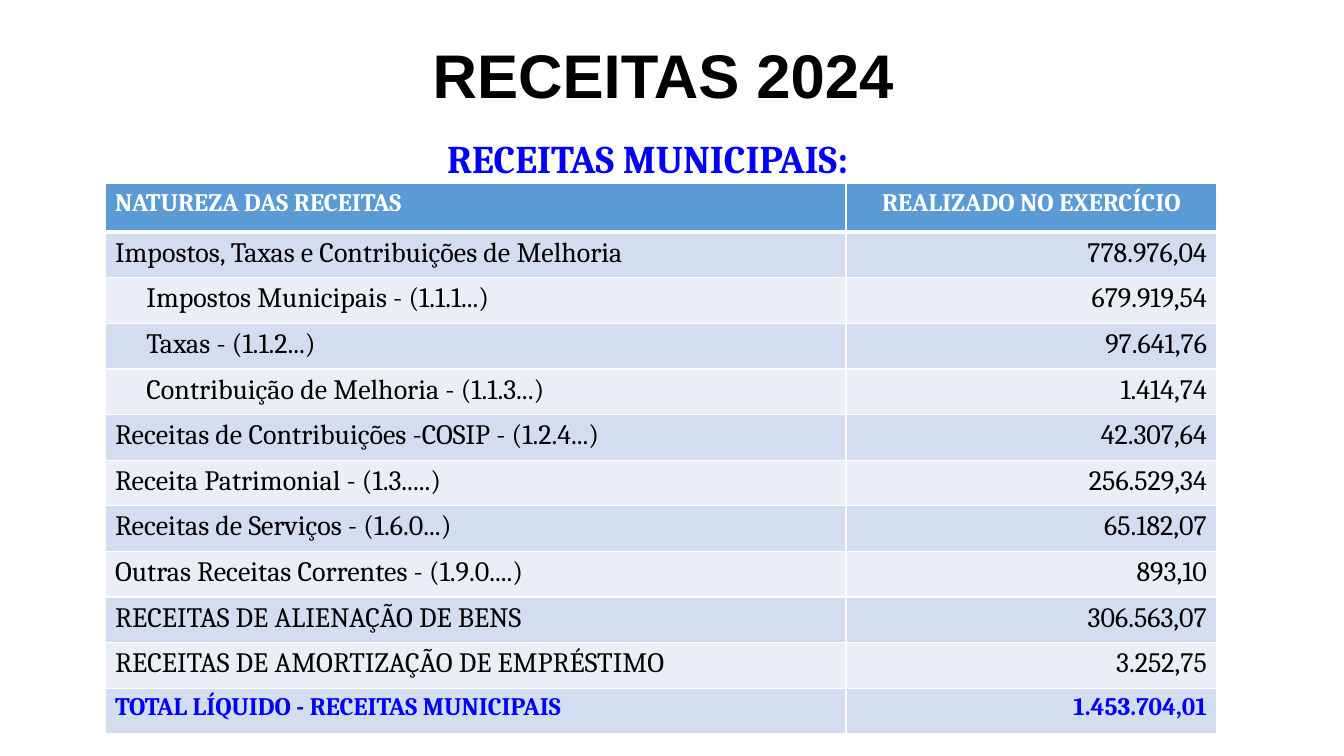
from dataclasses import dataclass
from typing import NamedTuple

from lxml import etree
from pptx import Presentation
from pptx.dml import color
from pptx.enum import text
from pptx.oxml import ns
from pptx.util import Cm, Pt


@dataclass(frozen=True)
class Theme:
    head: str = "Arial"
    body: str = "Cambria"
    black: str = "000000"
    white: str = "FFFFFF"
    blue: str = "0000FF"
    bar: str = "5B9BD5"
    dark: str = "D2DEEF"
    light: str = "EAEFF7"
    title: int = 44
    sub: int = 28
    entry: int = 20
    label: int = 18


class Style(NamedTuple):
    face: str
    size: int
    tint: str
    bold: bool
    align: text.PP_ALIGN = text.PP_ALIGN.LEFT


class Title(NamedTuple):
    words: str
    box: tuple[float, float, float, float]
    style: Style
    anchor: text.MSO_ANCHOR
    before: int


class Entry(NamedTuple):
    name: str
    value: str
    inset: float = 0


THEME = Theme()
LEFT, MID, RIGHT = text.PP_ALIGN.LEFT, text.PP_ALIGN.CENTER, text.PP_ALIGN.RIGHT
HEAD = Style(THEME.body, THEME.label, THEME.white, True)
PLAIN = Style(THEME.body, THEME.entry, THEME.black, False)
TOTAL = Style(THEME.body, THEME.label, THEME.blue, True)
PAD = 0.25
SUB = 0.79

TITLES = [
    Title("RECEITAS 2024 ", (2.33, 0.58, 29.21, 2.82),
          Style(THEME.head, THEME.title, THEME.black, True, MID),
          text.MSO_ANCHOR.MIDDLE, 0),
    Title("RECEITAS MUNICIPAIS: ", (2.33, 3.4, 28.2, 1.57),
          Style(THEME.body, THEME.sub, THEME.blue, True, MID),
          text.MSO_ANCHOR.TOP, 10),
]

ROWS = [
    Entry("NATUREZA DAS RECEITAS", "REALIZADO NO EXERCÍCIO"),
    Entry("Impostos, Taxas e Contribuições de Melhoria", "778.976,04"),
    Entry("Impostos Municipais - (1.1.1...)", "679.919,54", SUB),
    Entry("Taxas - (1.1.2...)", "97.641,76", SUB),
    Entry("Contribuição de Melhoria - (1.1.3...)", "1.414,74", SUB),
    Entry("Receitas de Contribuições -COSIP - (1.2.4...)", "42.307,64"),
    Entry("Receita Patrimonial - (1.3.....)", "256.529,34"),
    Entry("Receitas de Serviços - (1.6.0...)", "65.182,07"),
    Entry("Outras Receitas Correntes - (1.9.0....)", "893,10"),
    Entry("RECEITAS DE ALIENAÇÃO DE BENS", "306.563,07"),
    Entry("RECEITAS DE AMORTIZAÇÃO DE EMPRÉSTIMO", "3.252,75"),
    Entry("TOTAL LÍQUIDO - RECEITAS MUNICIPAIS", "1.453.704,01"),
]


def write(frame, words: str, style: Style):
    para = frame.paragraphs[0]
    para.text = words
    para.alignment = style.align
    font = para.font
    font.name, font.size, font.bold = style.face, Pt(style.size), style.bold
    font.color.rgb = color.RGBColor.from_string(style.tint)
    return para


def add_title(slide, item: Title) -> None:
    frame = slide.shapes.add_textbox(*map(Cm, item.box)).text_frame
    frame.word_wrap = True
    frame.vertical_anchor = item.anchor
    para = write(frame, item.words, item.style)
    para.line_spacing = 0.9
    para.space_before = Pt(item.before)


def add_edges(cell, top: int, base: int) -> None:
    props = cell._tc.get_or_add_tcPr()
    for side, width in (("L", 1), ("R", 1), ("T", top), ("B", base)):
        line = etree.SubElement(props, ns.qn(f"a:ln{side}"), w=str(Pt(width)))
        fill = etree.SubElement(line, ns.qn("a:solidFill"))
        etree.SubElement(fill, ns.qn("a:srgbClr"), val=THEME.white)


def add_cell(cell, words: str, style: Style, fill: str, inset: float, row: int) -> None:
    add_edges(cell, 3 if row == 1 else 1, 3 if row == 0 else 1)
    cell.fill.solid()
    cell.fill.fore_color.rgb = color.RGBColor.from_string(fill)
    cell.margin_left = Cm(PAD + inset)
    write(cell.text_frame, words, style)


def add_grid(slide, rows: list[Entry]) -> None:
    wide, tall = (18.67, 9.35), [1.22] + [1.15] * (len(rows) - 1)
    grid = slide.shapes.add_table(
        len(rows), 2, Cm(2.65), Cm(4.63), Cm(sum(wide)), Cm(sum(tall))).table
    for col, width in zip(grid.columns, wide):
        col.width = Cm(width)
    for i, item in enumerate(rows):
        grid.rows[i].height = Cm(tall[i])
        style, fill, side = PLAIN, THEME.dark if i % 2 else THEME.light, RIGHT
        if i == 0:
            style, fill, side = HEAD, THEME.bar, MID
        elif i == len(rows) - 1:
            style = TOTAL
        add_cell(grid.cell(i, 0), item.name, style, fill, item.inset, i)
        add_cell(grid.cell(i, 1), item.value, style._replace(align=side), fill, 0, i)


def main() -> None:
    deck = Presentation()
    deck.slide_width, deck.slide_height = Cm(33.87), Cm(19.05)
    slide = deck.slides.add_slide(deck.slide_layouts[6])
    for item in TITLES:
        add_title(slide, item)
    add_grid(slide, ROWS)
    deck.save("out.pptx")


if __name__ == "__main__":
    main()
